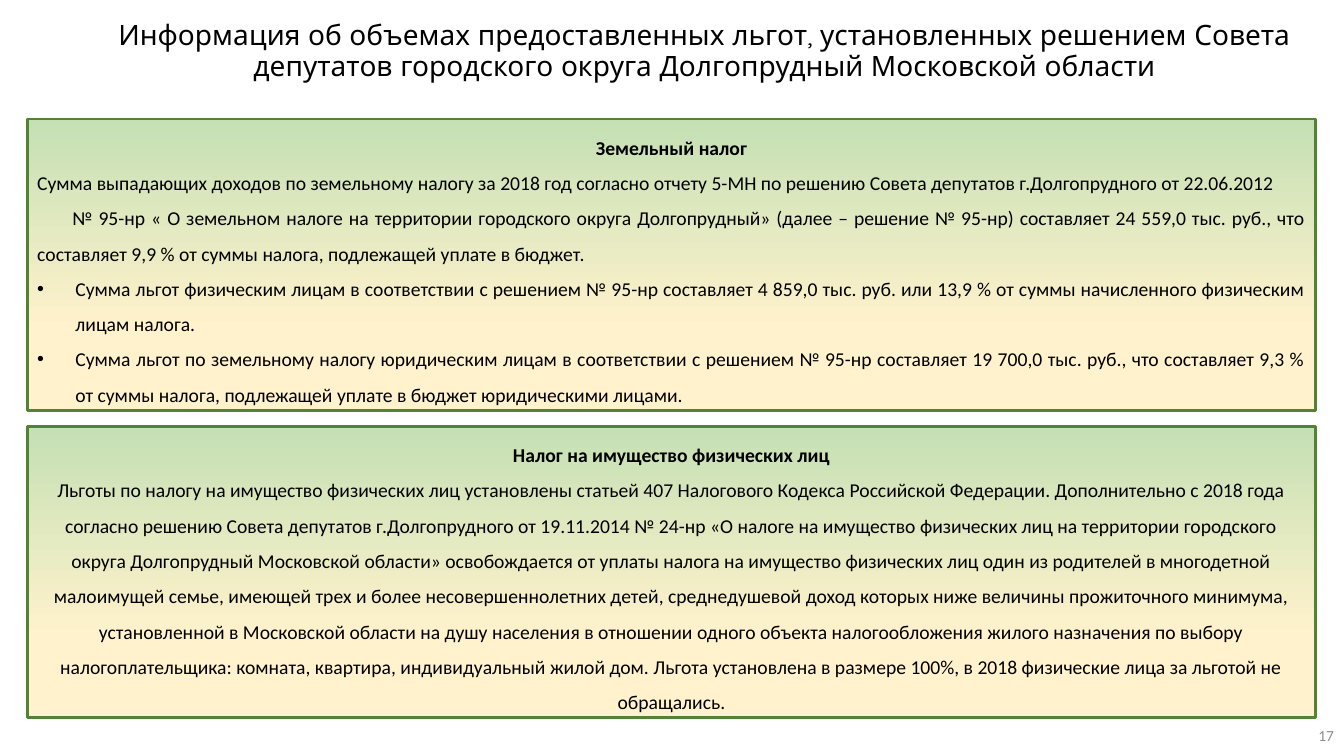
"""Build the slide on land and property tax relief in Dolgoprudny."""
from dataclasses import dataclass

from lxml.etree import SubElement
from pptx import Presentation
from pptx.dml.color import RGBColor
from pptx.enum.shapes import MSO_SHAPE
from pptx.enum.text import MSO_ANCHOR, MSO_AUTO_SIZE, PP_ALIGN
from pptx.oxml.ns import qn
from pptx.util import Inches, Pt

TITLE = (
    "Информация об объемах предоставленных льгот, установленных решением Совета "
    "депутатов городского округа Долгопрудный Московской области"
)
PAGE_NUMBER = "17"
PANELS = [
    [
        ("heading", ["Земельный налог"]),
        ("opening", ["Сумма выпадающих доходов по земельному налогу за 2018 год согласно отчету "
                     "5-МН по решению Совета депутатов г.Долгопрудного от 22.06.2012"]),
        ("indented", ["№ 95-нр « О земельном налоге на территории городского округа Долгопрудный» "
                      "(далее – решение № 95-нр) составляет 24 559,0 тыс. руб., что составляет "
                      "9,9 % от суммы налога, подлежащей уплате в бюджет."]),
        ("bullet", ["Сумма льгот физическим лицам в соответствии с решением № 95-нр составляет "
                    "4 859,0 тыс. руб. или 13,9 % от суммы начисленного физическим лицам налога."]),
        ("bullet", ["Сумма льгот по земельному налогу юридическим лицам в соответствии с решением "
                    "№ 95-нр составляет 19 700,0 тыс. руб., что составляет 9,3 % от суммы налога, "
                    "подлежащей уплате в бюджет юридическими лицами."]),
    ],
    [
        ("heading", ["Налог на имущество физических лиц"]),
        ("centered", [
            "Льготы по налогу на имущество физических лиц установлены статьей 407 "
            "Налогового Кодекса Российской Федерации. ",
            "Дополнительно с 2018 года согласно решению Совета депутатов г.Долгопрудного от "
            "19.11.2014 № 24-нр «О налоге на имущество физических лиц на территории городского "
            "округа Долгопрудный Московской области» освобождается от уплаты налога на имущество "
            "физических лиц один из родителей в многодетной малоимущей семье, имеющей трех и "
            "более несовершеннолетних детей, ",
            "среднедушевой доход которых ниже величины прожиточного минимума, установленной в "
            "Московской области на душу населения в отношении одного объекта налогообложения "
            "жилого назначения по выбору налогоплательщика: комната, квартира, индивидуальный "
            "жилой дом. ",
            "Льгота установлена в размере 100%, в 2018 физические лица за льготой не обращались.",
        ]),
    ],
]
PANEL_LEFT, PANEL_TOP, PANEL_WIDTH, PANEL_HEIGHT, PANEL_GAP = 0.27, 1.18, 12.78, 2.89, 0.16
ALIGNMENTS = {
    "heading": PP_ALIGN.CENTER,
    "centered": PP_ALIGN.CENTER,
    "opening": PP_ALIGN.LEFT,
    "indented": PP_ALIGN.JUSTIFY,
    "bullet": PP_ALIGN.JUSTIFY,
}
INDENTS = {"indented": (0, 0.35), "bullet": (0.38, -0.38)}


@dataclass(frozen=True)
class Theme:
    """Colours, fonts and type sizes of the slide."""
    text: str = "000000"
    muted: str = "8C8C8C"
    border: str = "548235"
    green: str = "C5E0B4"
    cream: str = "FFF2CC"
    title_font: str = "Quicksand"
    body_font: str = "Calibri"
    title_size: int = 20
    body_size: int = 14
    number_size: int = 11


THEME = Theme()


def add_run(paragraph, text, font, size, color, bold=False):
    """Add one formatted run to a paragraph."""
    run = paragraph.add_run()
    run.text = text
    run.font.name = font
    run.font.size = Pt(size)
    run.font.bold = bold
    run.font.color.rgb = RGBColor.from_string(color)


def format_paragraph(paragraph, kind):
    """Set alignment, spacing, indents and bullet for a kind of paragraph."""
    paragraph.alignment = ALIGNMENTS[kind]
    paragraph.line_spacing = 1.5
    properties = paragraph._p.get_or_add_pPr()
    margin, indent = INDENTS.get(kind, (0, 0))
    properties.set("marL", str(Inches(margin)))
    properties.set("indent", str(Inches(indent)))
    if kind == "bullet":
        SubElement(properties, qn("a:buFont")).set("typeface", "Arial")
        SubElement(properties, qn("a:buChar")).set("char", "•")


def add_panel(slide, top, content):
    """Add a gradient panel with its paragraphs."""
    panel = slide.shapes.add_shape(
        MSO_SHAPE.RECTANGLE, Inches(PANEL_LEFT), Inches(top),
        Inches(PANEL_WIDTH), Inches(PANEL_HEIGHT))
    panel.shadow.inherit = False
    panel.fill.gradient()
    panel.fill.gradient_angle = 270
    stops = [(0, THEME.green), (0.72, THEME.cream)]
    for stop, (position, color) in zip(panel.fill.gradient_stops, stops):
        stop.position = position
        stop.color.rgb = RGBColor.from_string(color)
    panel.line.color.rgb = RGBColor.from_string(THEME.border)
    panel.line.width = Pt(2)
    frame = panel.text_frame
    frame.word_wrap = True
    frame.vertical_anchor = MSO_ANCHOR.TOP
    frame.auto_size = MSO_AUTO_SIZE.SHAPE_TO_FIT_TEXT
    for index, (kind, texts) in enumerate(content):
        paragraph = frame.add_paragraph() if index else frame.paragraphs[0]
        format_paragraph(paragraph, kind)
        for text in texts:
            add_run(paragraph, text, THEME.body_font, THEME.body_size, THEME.text,
                    kind == "heading")


def add_title(slide):
    """Place and fill the title placeholder."""
    title = slide.shapes.title
    title.left, title.top = Inches(0.91), Inches(0.22)
    title.width, title.height = Inches(12.15), Inches(0.59)
    frame = title.text_frame
    frame.word_wrap = True
    frame.auto_size = MSO_AUTO_SIZE.NONE
    frame.vertical_anchor = MSO_ANCHOR.MIDDLE
    paragraph = frame.paragraphs[0]
    paragraph.alignment = PP_ALIGN.CENTER
    paragraph.line_spacing = 0.9
    add_run(paragraph, TITLE, THEME.title_font, THEME.title_size, THEME.text)


def add_page_number(slide):
    """Add the page number in the lower right corner."""
    box = slide.shapes.add_textbox(Inches(10.33), Inches(7.1), Inches(3), Inches(0.4))
    box.text_frame.word_wrap = True
    box.text_frame.vertical_anchor = MSO_ANCHOR.MIDDLE
    paragraph = box.text_frame.paragraphs[0]
    paragraph.alignment = PP_ALIGN.RIGHT
    add_run(paragraph, PAGE_NUMBER, THEME.body_font, THEME.number_size, THEME.muted)


def main():
    """Build and save the presentation."""
    presentation = Presentation()
    presentation.slide_width, presentation.slide_height = Inches(13.33), Inches(7.5)
    slide = presentation.slides.add_slide(presentation.slide_layouts[5])
    for index, content in enumerate(PANELS):
        add_panel(slide, PANEL_TOP + index * (PANEL_HEIGHT + PANEL_GAP), content)
    add_title(slide)
    add_page_number(slide)
    presentation.save("out.pptx")


if __name__ == "__main__":
    main()
